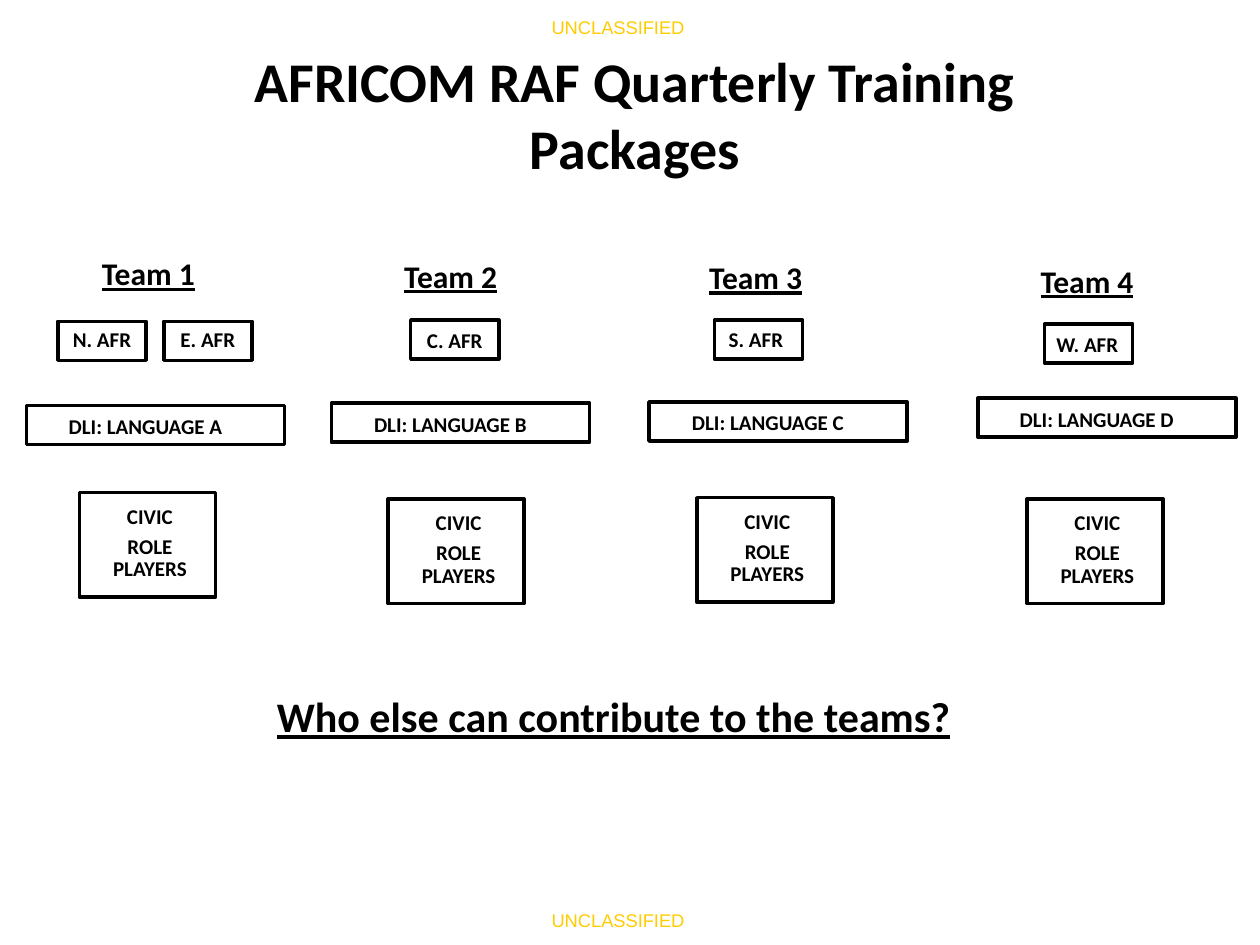
from pptx import Presentation
from pptx.dml.color import RGBColor
from pptx.enum.shapes import MSO_SHAPE
from pptx.enum.text import MSO_ANCHOR, MSO_AUTO_SIZE, PP_ALIGN
from pptx.util import Inches, Pt

BLACK = RGBColor(0x00, 0x00, 0x00)
WHITE = RGBColor(0xFF, 0xFF, 0xFF)
MARKING_YELLOW = RGBColor(0xFF, 0xCC, 0x00)

REGION_SIZE = (0.7, 0.31)
LANGUAGE_SIZE = (2.05, 0.31)
PLAYERS_SIZE = (1.08, 0.83)
PLAYERS_LABEL_SIZE = (0.7, 0.81)

prs = Presentation()
prs.slide_width, prs.slide_height = Inches(10), Inches(7.5)
slide = prs.slides.add_slide(prs.slide_layouts[5])


def add_label(lines, left, top, size, pt, color=BLACK, font="Calibri", bold=True,
              underline=None, wrap=True, margin=None, align=PP_ALIGN.CENTER):
    label = slide.shapes.add_textbox(Inches(left), Inches(top), *map(Inches, size))
    frame = label.text_frame
    frame.text = "\n".join(lines)
    frame.word_wrap = wrap
    frame.vertical_anchor = MSO_ANCHOR.MIDDLE if wrap else MSO_ANCHOR.TOP
    frame.auto_size = MSO_AUTO_SIZE.NONE if wrap else MSO_AUTO_SIZE.SHAPE_TO_FIT_TEXT
    if margin is not None:
        frame.margin_left = frame.margin_right = Inches(margin)
        frame.margin_top = frame.margin_bottom = Inches(margin)
    for paragraph in frame.paragraphs:
        paragraph.alignment = align
        paragraph.font.size = Pt(pt)
        paragraph.font.name = font
        paragraph.font.bold = bold
        paragraph.font.underline = underline
        paragraph.font.color.rgb = color
        if margin is not None:
            paragraph.line_spacing = 0.9
            paragraph.space_after = Pt(4.2)


def add_box(lines, left, top, size, shift, label_size=None):
    """Outlined box with its label set off from the box corner by shift."""
    box = slide.shapes.add_shape(MSO_SHAPE.RECTANGLE, Inches(left), Inches(top),
                                 *map(Inches, size))
    box.shadow.inherit = False
    box.fill.solid()
    box.fill.fore_color.rgb = WHITE
    box.line.color.rgb = BLACK
    box.line.width = Pt(2)
    add_label(lines, left + shift[0], top + shift[1], label_size or size, 12, margin=0.01)


# Classification markings at head and foot
for marking_top in (0.08, 7.17):
    add_label(["UNCLASSIFIED"], 4.28, marking_top, (1.27, 0.28), 10.5, MARKING_YELLOW,
              "Arial", bold=False, wrap=False, align=PP_ALIGN.LEFT)

# Title
title = slide.shapes.title
title.left, title.top, title.width, title.height = map(Inches, (1.25, 0.58, 7.58, 0.64))
title.text_frame.text = "AFRICOM RAF Quarterly Training Packages"
title.text_frame.word_wrap = True
title.text_frame.auto_size = MSO_AUTO_SIZE.NONE
title.text_frame.vertical_anchor = MSO_ANCHOR.MIDDLE
heading = title.text_frame.paragraphs[0]
heading.alignment = PP_ALIGN.CENTER
heading.font.size = Pt(32)
heading.font.name = "Calibri"
heading.font.bold = True
heading.font.color.rgb = BLACK

# Team columns: corner of team name, regions with label shift, language box, players box
teams = [
    ((0.71, 1.97), [("N. AFR", 0.46, 2.55, (0, 0)), ("E. AFR", 1.3, 2.55, (0, 0))],
     "A", (0.21, 3.22), (0.63, 3.91)),
    ((3.11, 1.99), [("C. AFR", 3.26, 2.54, (0, 0.02))], "B", (2.63, 3.2), (3.08, 3.96)),
    ((5.53, 2.0), [("S. AFR", 5.67, 2.54, (-0.02, 0.01))], "C", (5.15, 3.19), (5.53, 3.95)),
    ((8.16, 2.03), [("W. AFR", 8.29, 2.57, (-0.01, 0.02))], "D", (7.76, 3.16), (8.15, 3.96)),
]
for number, (name_at, regions, language, language_at, players_at) in enumerate(teams, 1):
    add_label([f"Team {number}"], *name_at, (0.95, 0.4), 18, underline=True, wrap=False,
              align=PP_ALIGN.LEFT)
    for region, left, top, shift in regions:
        add_box([region], left, top, REGION_SIZE, shift)
    add_box([f"DLI: LANGUAGE {language}"], *language_at, LANGUAGE_SIZE, (-0.08, 0.02))
    add_box(["CIVIC", "ROLE PLAYERS"], *players_at, PLAYERS_SIZE, (0.21, 0),
            PLAYERS_LABEL_SIZE)

# Closing question
add_label(["Who else can contribute to the teams?"], 1.08, 5.36, (7.58, 0.64), 24,
          underline=True)

prs.save("out.pptx")
